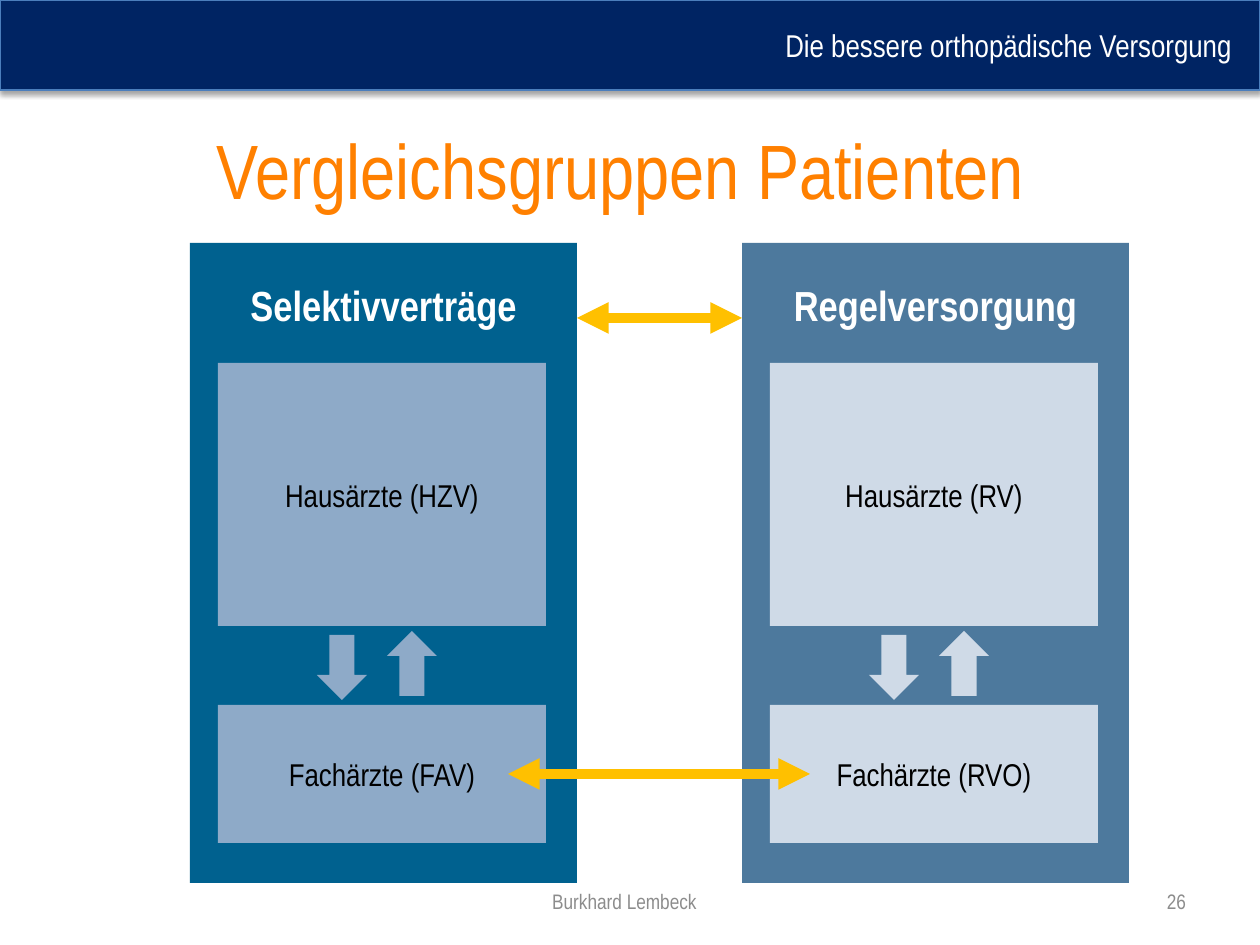
"""Build the slide that compares two groups of patients."""
from lxml import etree
from pptx import Presentation
from pptx import util as u
from pptx.dml.color import RGBColor
from pptx.enum import shapes, text
from pptx.oxml import ns

BANNER = "Die bessere orthopädische Versorgung"
TITLE = "Vergleichsgruppen Patienten"
PANELS = [
    ("Selektivverträge", "Hausärzte (HZV)", "Fachärzte (FAV)", "teal", "blue"),
    ("Regelversorgung", "Hausärzte (RV)", "Fachärzte (RVO)", "slate", "pale"),
]
FOOT = [("Burkhard Lembeck", (425, 876, 399, 50), "CENTER"),
        ("26", (903, 876, 294, 50), "RIGHT")]
LINKS = [(577, 742, 318), (508, 810, 774)]
COLORS = {
    "navy": "002463", "edge": "4B7EBC", "title": "FF8000", "teal": "00618F",
    "blue": "8EAAC8", "slate": "4D799D", "pale": "CFDAE7", "gold": "FFC000",
    "gray": "8C8C8C", "white": "FFFFFF", "black": "000000",
}
LEFT, TOP, STEP = 190, 243, 552
WIDE, HIGH = 387, 640
INNER = [(28, 120, 328, 263), (28, 462, 328, 138)]
ARROWS = [(127, 392, 50, 65, 0), (197, 388, 50, 65, 180)]
KIND = shapes.MSO_SHAPE


def px(n):
    return u.Emu(n * u.Inches(1) // 126)


def rgb(name):
    return RGBColor.from_string(COLORS[name])


def write(shape, words, size=18, color="black", bold=False, align="CENTER",
          anchor="MIDDLE", wrap=True, pad=(11, 6, 11, 6)):
    frame = shape.text_frame
    frame.word_wrap = wrap
    frame.auto_size = text.MSO_AUTO_SIZE.NONE
    frame.vertical_anchor = text.MSO_ANCHOR[anchor]
    (frame.margin_left, frame.margin_top,
     frame.margin_right, frame.margin_bottom) = map(px, pad)
    par = frame.paragraphs[0]
    par.alignment = text.PP_ALIGN[align]
    run = par.add_run()
    run.text = words
    run.font.name = "Arial Narrow"
    run.font.size = u.Pt(size)
    run.font.bold = bold
    run.font.color.rgb = rgb(color)


def block(slide, kind, box, fill):
    shape = slide.shapes.add_shape(kind, *map(px, box))
    shape.shadow.inherit = False
    shape.fill.solid()
    shape.fill.fore_color.rgb = rgb(fill)
    shape.line.fill.background()
    return shape


def banner(slide):
    bar = block(slide, KIND.RECTANGLE, (0, 0, 1260, 90), "navy")
    bar.line.color.rgb = rgb("edge")
    bar.line.width = u.Pt(0.75)
    glow = etree.SubElement(
        bar._element.spPr.find(ns.qn("a:effectLst")), ns.qn("a:outerShdw"),
        blurRad=str(u.Pt(3.1)), dist=str(u.Pt(1.8)), dir="5400000",
        rotWithShape="0")
    tint = etree.SubElement(glow, ns.qn("a:srgbClr"), val=COLORS["black"])
    etree.SubElement(tint, ns.qn("a:alpha"), val="35000")
    write(bar, BANNER, color="white", align="RIGHT", pad=(11, 6, 28, 6))


def panel(slide, left, head, upper, lower, back, front):
    base = block(slide, KIND.RECTANGLE, (left, TOP, WIDE, HIGH), back)
    write(base, head, size=24, color="white", bold=True, anchor="TOP",
          pad=(11, 36, 11, 6))
    for words, (x, y, w, h) in zip((upper, lower), INNER):
        cell = block(slide, KIND.RECTANGLE, (left + x, TOP + y, w, h), front)
        write(cell, words, wrap=False)
    for x, y, w, h, turn in ARROWS:
        arrow = block(slide, KIND.DOWN_ARROW, (left + x, TOP + y, w, h), front)
        arrow.rotation = turn


def link(slide, start, end, y):
    line = slide.shapes.add_connector(
        shapes.MSO_CONNECTOR.STRAIGHT, px(start), px(y), px(end), px(y))
    line.line.color.rgb = rgb("gold")
    line.line.width = u.Pt(6)
    for tag in ("a:headEnd", "a:tailEnd"):
        etree.SubElement(line.line._get_or_add_ln(), ns.qn(tag), type="triangle")
    etree.SubElement(line._element.spPr, ns.qn("a:effectLst"))


def main():
    deck = Presentation()
    deck.slide_width, deck.slide_height = px(1260), px(945)
    slide = deck.slides.add_slide(deck.slide_layouts[5])
    banner(slide)
    title = slide.shapes.title
    title.left, title.top, title.width, title.height = map(px, (54, 116, 1134, 106))
    write(title, TITLE, size=44, color="title")
    for i, parts in enumerate(PANELS):
        panel(slide, LEFT + i * STEP, *parts)
    for ends in LINKS:
        link(slide, *ends)
    for words, box, align in FOOT:
        note = slide.shapes.add_textbox(*map(px, box))
        write(note, words, size=12, color="gray", align=align)
    deck.save("out.pptx")


if __name__ == "__main__":
    main()
